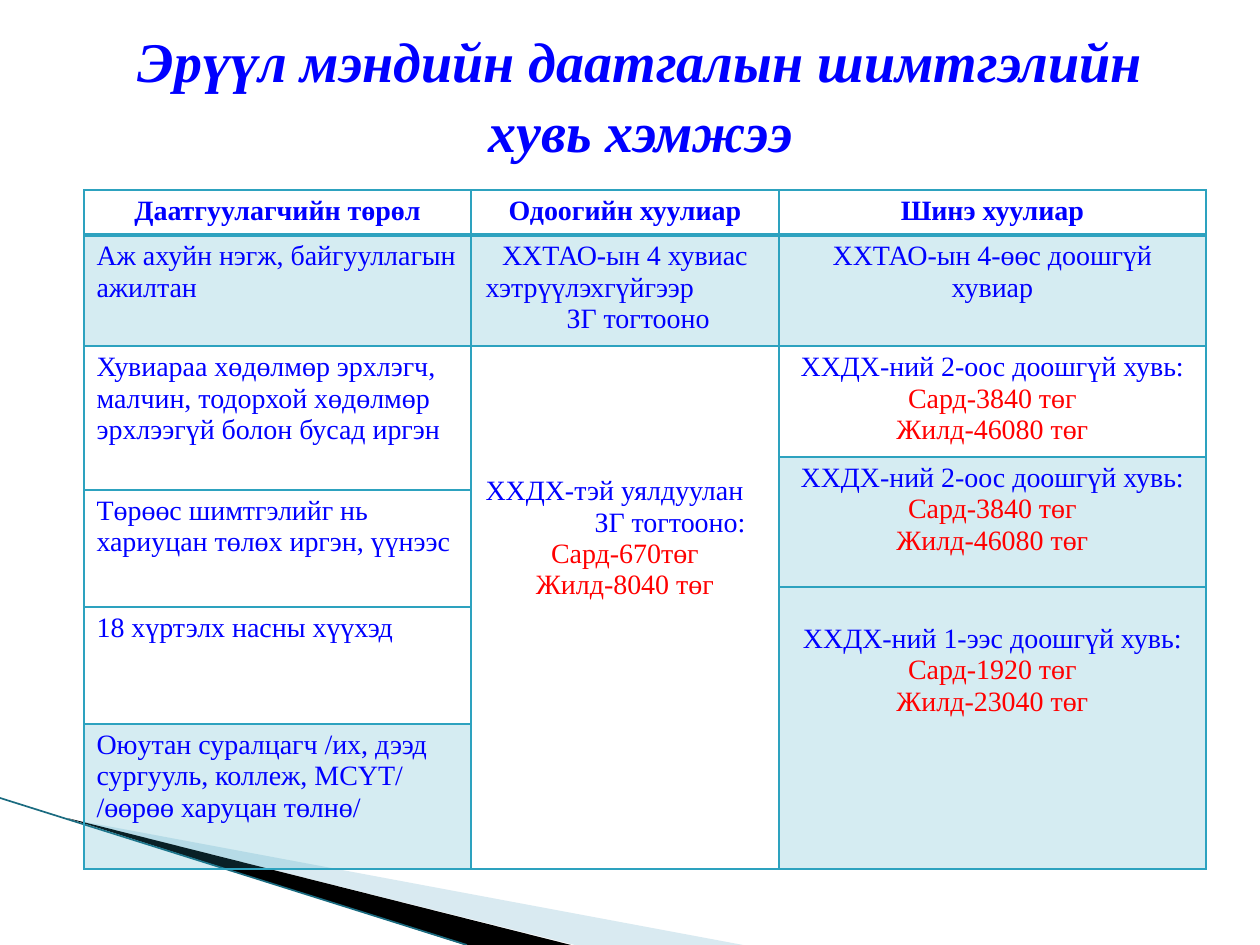
"""Build the slide on health insurance contribution rates."""
from dataclasses import dataclass
from typing import Optional

from lxml.etree import SubElement
from pptx import Presentation
from pptx.dml.color import RGBColor
from pptx.enum.text import MSO_ANCHOR, MSO_AUTO_SIZE, PP_ALIGN
from pptx.oxml.ns import qn
from pptx.util import Pt

SCALE = 914400 / 126
FONT = "Times New Roman"
COLORS = {"blue": "0000FF", "red": "FF0000", "teal": "2DA2BF",
          "pale": "A0CBDC", "black": "000000", "edge": "1A6B80"}
COLS = [387, 308, 427]
ROWS = [45, 111, 111, 33, 97, 20, 117, 145]


@dataclass
class Line:
    text: str
    color: str = "blue"
    align: PP_ALIGN = PP_ALIGN.CENTER
    indent: int = 0
    bold: bool = False


@dataclass
class Entry:
    row: int
    col: int
    lines: list[Line]
    span: int = 1
    tint: bool = False
    top: int = 6


@dataclass
class Wedge:
    points: list[tuple[int, int]]
    color: str
    alpha: Optional[int] = None


def px(n: float) -> int:
    return round(n * SCALE)


def rgb(name: str) -> RGBColor:
    return RGBColor.from_string(COLORS[name])


def left(text: str, indent: int = 0) -> Line:
    return Line(text, align=PP_ALIGN.LEFT, indent=indent)


def rate(share: str, month: str, year: str) -> list[Line]:
    return [Line(f"ХХДХ-ний {share} доошгүй хувь:"),
            Line(f"Сард-{month} төг", "red"), Line(f"Жилд-{year} төг", "red")]


HEADS = ["Даатгуулагчийн төрөл", "Одоогийн хуулиар", "Шинэ хуулиар"]
ENTRIES = [Entry(0, i, [Line(head, bold=True)]) for i, head in enumerate(HEADS)] + [
    Entry(1, 0, [left("Аж ахуйн нэгж, байгууллагын ажилтан")], tint=True),
    Entry(1, 1, [Line("ХХТАО-ын 4 хувиас"), left("хэтрүүлэхгүйгээр", 2),
                 left("ЗГ тогтооно", 83)], tint=True),
    Entry(1, 2, [Line("ХХТАО-ын 4-өөс доошгүй хувиар")], tint=True),
    Entry(2, 0, [left("Хувиараа хөдөлмөр эрхлэгч, малчин, тодорхой хөдөлмөр "
                      "эрхлээгүй болон бусад иргэн")], 2),
    Entry(2, 1, [left("ХХДХ-тэй уялдуулан", 2), left("ЗГ тогтооно:", 111),
                 Line("Сард-670төг", "red"), Line("Жилд-8040 төг", "red")], 6, top=130),
    Entry(2, 2, rate("2-оос", "3840", "46080")),
    Entry(3, 2, rate("2-оос", "3840", "46080"), 2, True),
    Entry(4, 0, [left("Төрөөс шимтгэлийг нь хариуцан төлөх иргэн, үүнээс")], 2),
    Entry(5, 2, rate("1-ээс", "1920", "23040"), 3, True, 37),
    Entry(6, 0, [left("18 хүртэлх насны хүүхэд")]),
    Entry(7, 0, [left("Оюутан суралцагч /их, дээд сургууль, коллеж, МСҮТ/ "
                      "/өөрөө харуцан төлнө/")], tint=True),
]
WEDGES = [
    Wedge([(69, 819), (743, 945), (575, 945)], "pale", 40),
    Wedge([(67, 818), (571, 945), (465, 945)], "black"),
]


def paint(fill, color: str, alpha: Optional[int] = None) -> None:
    fill.solid()
    fill.fore_color.rgb = rgb(color)
    if alpha is not None:
        node = fill._xPr.find(qn("a:solidFill"))[0]
        SubElement(node, qn("a:alpha")).set("val", str(alpha * 1000))


def style(par, line: Line, size: int) -> None:
    par.text = line.text
    par.alignment = line.align
    if line.indent:
        par._p.get_or_add_pPr().set("marL", str(px(line.indent)))
    font = par.font
    font.name, font.size, font.bold = FONT, Pt(size), line.bold
    font.color.rgb = rgb(line.color)


def frame(cell, row: int) -> None:
    props = cell._tc.get_or_add_tcPr()
    for side in "LRTB":
        thick = (row, side) in ((0, "B"), (1, "T"))
        edge = SubElement(props, qn(f"a:ln{side}"), w=str(Pt(2 if thick else 1)))
        fill = SubElement(edge, qn("a:solidFill"))
        SubElement(fill, qn("a:srgbClr"), val=COLORS["teal"])


def add_wedge(slide, wedge: Wedge) -> None:
    maker = slide.shapes.build_freeform(*wedge.points[0], scale=SCALE)
    maker.add_line_segments(wedge.points[1:], close=True)
    shape = maker.convert_to_shape()
    shape.shadow.inherit = False
    shape.line.fill.background()
    paint(shape.fill, wedge.color, wedge.alpha)


def add_edge(slide) -> None:
    edge = slide.shapes.add_connector(1, 0, px(798), px(467), px(945))
    edge.line.color.rgb = rgb("edge")
    edge.line.width = Pt(0.95)
    SubElement(edge._element.spPr, qn("a:effectLst"))


def add_title(slide) -> None:
    title = slide.shapes.title
    title.left, title.top, title.width, title.height = map(px, (74, 45, 1133, 97))
    box = title.text_frame
    box.word_wrap, box.auto_size = True, MSO_AUTO_SIZE.NONE
    box.vertical_anchor = MSO_ANCHOR.MIDDLE
    par = box.paragraphs[0]
    style(par, Line("Эрүүл мэндийн даатгалын шимтгэлийн хувь хэмжээ", bold=True), 32)
    par.font.italic = True
    par.line_spacing = 1.05


def add_rates(slide) -> None:
    table = slide.shapes.add_table(len(ROWS), len(COLS), px(84), px(190),
                                   px(sum(COLS)), px(sum(ROWS))).table
    table.first_row = table.horz_banding = False
    for col, width in zip(table.columns, COLS):
        col.width = px(width)
    for i, (row, height) in enumerate(zip(table.rows, ROWS)):
        row.height = px(height)
        for cell in row.cells:
            frame(cell, i)
            cell.fill.background()
    for entry in ENTRIES:
        cell = table.cell(entry.row, entry.col)
        if entry.span > 1:
            cell.merge(table.cell(entry.row + entry.span - 1, entry.col))
        if entry.tint:
            paint(cell.fill, "teal", 20)
        cell.margin_top = px(entry.top)
        box = cell.text_frame
        for i, line in enumerate(entry.lines):
            style(box.add_paragraph() if i else box.paragraphs[0], line, 16)


def main() -> None:
    deck = Presentation()
    deck.slide_width, deck.slide_height = px(1260), px(945)
    slide = deck.slides.add_slide(deck.slide_layouts[5])
    for wedge in WEDGES:
        add_wedge(slide, wedge)
    add_edge(slide)
    add_title(slide)
    add_rates(slide)
    deck.save("out.pptx")


if __name__ == "__main__":
    main()
